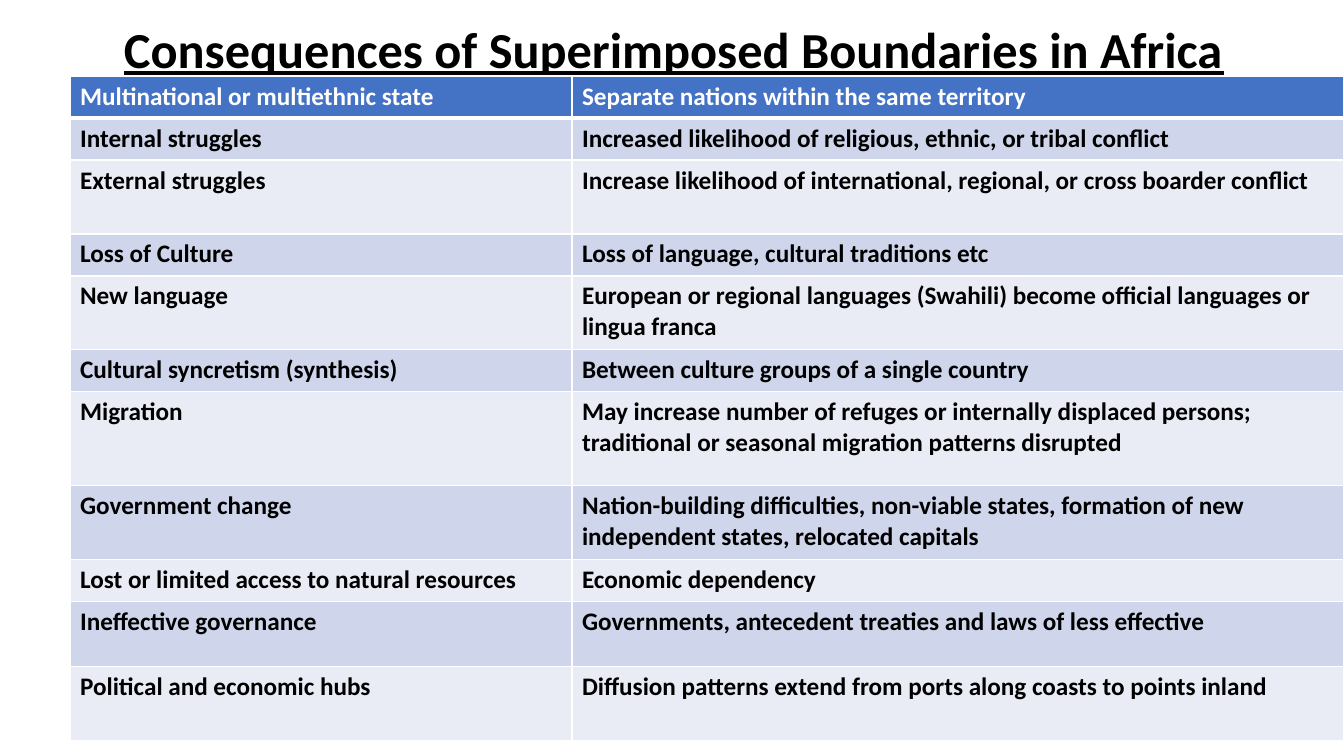
"""Build the slide on consequences of superimposed boundaries in Africa."""
from lxml import etree
from pptx import Presentation
from pptx.dml.color import RGBColor
from pptx.enum.text import MSO_ANCHOR
from pptx.oxml.ns import qn
from pptx.util import Pt

TITLE = "Consequences of Superimposed Boundaries in Africa"
ROWS = [
    (42, "Multinational or multiethnic state", "Separate nations within the same territory"),
    (42, "Internal struggles", "Increased likelihood of religious, ethnic, or tribal conflict"),
    (74, "External struggles",
     "Increase likelihood of international, regional, or cross boarder conflict"),
    (42, "Loss of Culture", "Loss of language, cultural traditions etc"),
    (74, "New language",
     "European or regional languages (Swahili) become official languages or lingua franca"),
    (42, "Cultural syncretism (synthesis)", "Between culture groups of a single country"),
    (94, "Migration",
     "May increase number of refuges or internally displaced persons; "
     "traditional or seasonal migration patterns disrupted"),
    (74, "Government change",
     "Nation-building difficulties, non-viable states, "
     "formation of new independent states, relocated capitals"),
    (42, "Lost or limited access to natural resources", "Economic dependency"),
    (65, "Ineffective governance", "Governments, antecedent treaties and laws of less effective"),
    (74, "Political and economic hubs",
     "Diffusion patterns extend from ports along coasts to points inland"),
]
COLS = (502, 772)
FONT = "Calibri"
MIDDLE = MSO_ANCHOR.MIDDLE
BLACK = RGBColor(0x00, 0x00, 0x00)
WHITE = RGBColor(0xFF, 0xFF, 0xFF)
BLUE = RGBColor(0x44, 0x72, 0xC4)
BANDS = (RGBColor(0xE9, 0xEB, 0xF5), RGBColor(0xCF, 0xD5, 0xEA))


def px(count):
    return round(count * 914400 / 100.8)


def write(para, text, size, color):
    run = para.add_run()
    run.text = text
    run.font.name = FONT
    run.font.size = Pt(size)
    run.font.bold = True
    run.font.color.rgb = color
    return run


def edge(cell, side, width):
    props = cell._tc.get_or_add_tcPr()
    line = etree.SubElement(props, qn("a:ln" + side), w=str(Pt(width)))
    fill = etree.SubElement(line, qn("a:solidFill"))
    etree.SubElement(fill, qn("a:srgbClr"), val=str(WHITE))


def add_title(slide):
    box = slide.shapes.add_textbox(px(91), px(13), px(1232), px(78))
    frame = box.text_frame
    frame.word_wrap = True
    frame.vertical_anchor = MIDDLE
    frame.margin_left = px(33)
    para = frame.paragraphs[0]
    para.line_spacing = 0.9
    write(para, TITLE, 36, BLACK).font.underline = True


def add_grid(slide):
    high = sum(row[0] for row in ROWS)
    table = slide.shapes.add_table(
        len(ROWS), len(COLS), px(70), px(76), px(sum(COLS)), px(high)).table
    for col, width in zip(table.columns, COLS):
        col.width = px(width)
    for i, (height, *texts) in enumerate(ROWS):
        table.rows[i].height = px(height)
        for j, text in enumerate(texts):
            cell = table.cell(i, j)
            for side in "LRTB":
                thick = (i, side) in ((0, "B"), (1, "T"))
                edge(cell, side, 3 if thick else 1)
            cell.fill.solid()
            cell.fill.fore_color.rgb = BANDS[i % 2] if i else BLUE
            write(cell.text_frame.paragraphs[0], text, 18, BLACK if i else WHITE)


def main():
    deck = Presentation()
    deck.slide_width, deck.slide_height = px(1344), px(756)
    slide = deck.slides.add_slide(deck.slide_layouts[6])
    add_title(slide)
    add_grid(slide)
    deck.save("out.pptx")


if __name__ == "__main__":
    main()
